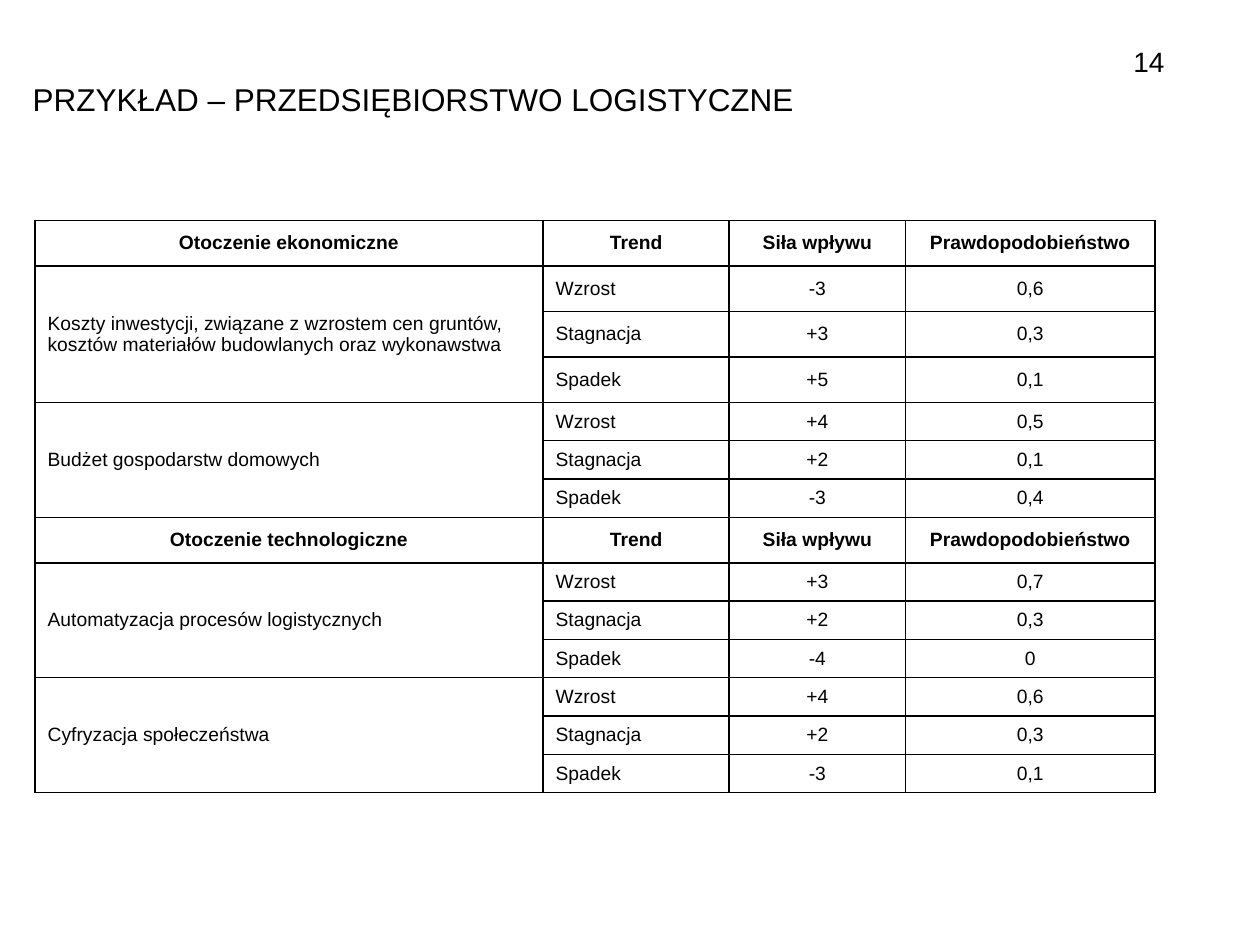
from pptx import Presentation
from pptx.dml.color import RGBColor as Rgb
from pptx.enum.text import MSO_ANCHOR as Anchor, PP_ALIGN as Align
from pptx.oxml import parse_xml
from pptx.oxml.ns import nsdecls
from pptx.util import Pt

TITLE = "PRZYKŁAD – PRZEDSIĘBIORSTWO LOGISTYCZNE"
PAGE = "14"
HEADS = ["Trend", "Siła wpływu", "Prawdopodobieństwo"]
TRENDS = ["Wzrost", "Stagnacja", "Spadek"]
# Each factor: name, row height, then (impact, probability) for each trend
AREAS = [
    ("Otoczenie ekonomiczne", [
        ("Koszty inwestycji, związane z wzrostem cen gruntów, "
         "kosztów materiałów budowlanych oraz wykonawstwa", 26,
         [("-3", "0,6"), ("+3", "0,3"), ("+5", "0,1")]),
        ("Budżet gospodarstw domowych", 21.9,
         [("+4", "0,5"), ("+2", "0,1"), ("-3", "0,4")]),
    ]),
    ("Otoczenie technologiczne", [
        ("Automatyzacja procesów logistycznych", 21.9,
         [("+3", "0,7"), ("+2", "0,3"), ("-4", "0")]),
        ("Cyfryzacja społeczeństwa", 21.9,
         [("+4", "0,6"), ("+2", "0,3"), ("-3", "0,1")]),
    ]),
]
THEME = {"font": "Arial", "ink": "000000", "paper": "FFFFFF",
         "title": 18, "page": 16, "cell": 11, "line": 1}
COLS = [290.3, 106.4, 100.8, 142.5]
LEFT, TOP = 20, 126
HEAD_H = 26


def write(frame, text, size, bold=False, align=Align.LEFT, anchor=Anchor.MIDDLE):
    frame.word_wrap = True
    frame.vertical_anchor = anchor
    para = frame.paragraphs[0]
    para.alignment = align
    run = para.add_run()
    run.text = text
    font = run.font
    font.name, font.size, font.bold = THEME["font"], Pt(size), bold
    font.color.rgb = Rgb.from_string(THEME["ink"])


def style(cell):
    """Draw all four borders, then fill the cell."""
    props = cell._tc.get_or_add_tcPr()
    for side in "LRTB":
        props.append(parse_xml(
            f'<a:ln{side} {nsdecls("a")} w="{Pt(THEME["line"])}"><a:solidFill>'
            f'<a:srgbClr val="{THEME["ink"]}"/></a:solidFill></a:ln{side}>'))
    cell.fill.solid()
    cell.fill.fore_color.rgb = Rgb.from_string(THEME["paper"])


def layout():
    """Return table rows as (height, texts, is head) and the merged row spans."""
    rows, spans = [], []
    for area, factors in AREAS:
        rows.append((HEAD_H, [area, *HEADS], True))
        for name, high, values in factors:
            spans.append((len(rows), len(rows) + len(values) - 1))
            for i, (trend, pair) in enumerate(zip(TRENDS, values)):
                rows.append((high, ["" if i else name, trend, *pair], False))
    return rows, spans


def add_grid(slide):
    rows, spans = layout()
    table = slide.shapes.add_table(
        len(rows), len(COLS), Pt(LEFT), Pt(TOP), Pt(sum(COLS)),
        Pt(sum(row[0] for row in rows))).table
    table.horz_banding = table.first_row = False
    for col, wide in zip(table.columns, COLS):
        col.width = Pt(wide)
    for r, (high, texts, head) in enumerate(rows):
        table.rows[r].height = Pt(high)
        for c, text in enumerate(texts):
            cell = table.cell(r, c)
            style(cell)
            if text:
                mid = head or c > 1
                write(cell.text_frame, text, THEME["cell"], bold=head,
                      align=Align.CENTER if mid else Align.LEFT)
                cell.vertical_anchor = Anchor.MIDDLE
    for first, last in spans:
        table.cell(first, 0).merge(table.cell(last, 0))


def main():
    deck = Presentation()
    deck.slide_width, deck.slide_height = Pt(720), Pt(540)
    slide = deck.slides.add_slide(deck.slide_layouts[5])
    title = slide.shapes.title
    title.left, title.top, title.width, title.height = map(Pt, (11.5, 42, 584.6, 52.6))
    write(title.text_frame, TITLE, THEME["title"], anchor=Anchor.TOP)
    page = slide.shapes.add_textbox(*map(Pt, (504, 16.6, 168.5, 37.4)))
    write(page.text_frame, PAGE, THEME["page"], align=Align.RIGHT)
    add_grid(slide)
    deck.save("out.pptx")


if __name__ == "__main__":
    main()
